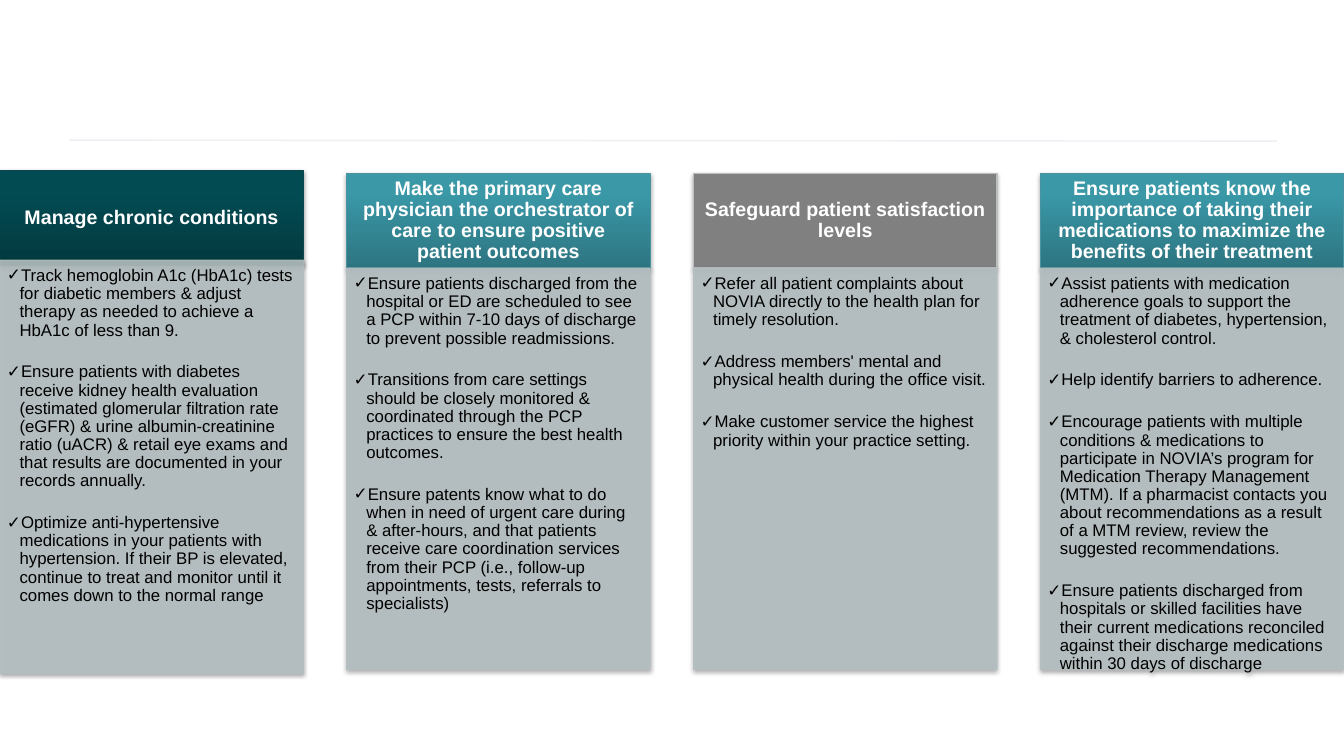
from copy import deepcopy
from dataclasses import dataclass

from lxml.etree import SubElement
from pptx import Presentation
from pptx.dml.color import RGBColor
from pptx.enum.shapes import MSO_CONNECTOR, MSO_SHAPE
from pptx.enum.text import MSO_ANCHOR, PP_ALIGN
from pptx.oxml.ns import qn
from pptx.shapes.autoshape import Shape
from pptx.slide import Slide
from pptx.text.text import _Paragraph
from pptx.util import Pt

COLORS = {
    "rule": "EEEFF3", "body": "B4BEC0", "shade": "000000",
    "ink": "000000", "white": "FFFFFF",
}
WIDTH = 216.8
PITCH = 247.7
HEAD = {
    "margin_left": Pt(7.9), "margin_right": Pt(7.9),
    "margin_top": Pt(4.3), "margin_bottom": Pt(4.3),
    "vertical_anchor": MSO_ANCHOR.MIDDLE, "word_wrap": True,
}
BODY = {
    "margin_left": Pt(5), "margin_right": Pt(6.5),
    "margin_top": Pt(5), "margin_bottom": Pt(7.2),
    "vertical_anchor": MSO_ANCHOR.TOP, "word_wrap": True,
}
TITLE = {"alignment": PP_ALIGN.CENTER, "line_spacing": 0.9}
POINT = {"alignment": PP_ALIGN.LEFT, "line_spacing": 0.9, "space_after": Pt(17)}


@dataclass
class Theme:
    line: str
    stops: list[tuple[float, str]]


@dataclass
class Column:
    title: str
    theme: Theme
    points: list[str]
    top: float = 123.8
    split: float = 191.5
    end: float = 478.1


DARK = Theme("0D464C", [(0, "023A40"), (0.8, "034B53"), (1, "014C55")])
TEAL = Theme("4994A0", [(0, "2D7581"), (0.8, "3A98A7"), (1, "389AAA")])
GREY = Theme("BBBEBE", [(0, "808080")])

COLUMNS = [
    Column("Manage chronic conditions", DARK, [
        "Track hemoglobin A1c (HbA1c) tests for diabetic members & adjust therapy as needed to achieve a HbA1c of less than 9.",
        "Ensure patients with diabetes receive kidney health evaluation (estimated glomerular filtration rate (eGFR) & urine albumin-creatinine ratio (uACR) & retail eye exams and that results are documented in your records annually.",
        "Optimize anti-hypertensive medications in your patients with hypertension. If their BP is elevated, continue to treat and monitor until it comes down to the normal range",
    ], 121.7, 185.8, 481),
    Column("Make the primary care physician the orchestrator of care to ensure positive patient outcomes", TEAL, [
        "Ensure patients discharged from the hospital or ED are scheduled to see a PCP within 7-10 days of discharge to prevent possible readmissions.",
        "Transitions from care settings should be closely monitored & coordinated through the PCP practices to ensure the best health outcomes.",
        "Ensure patents know what to do when in need of urgent care during & after-hours, and that patients receive care coordination services from their PCP (i.e., follow-up appointments, tests, referrals to specialists)",
    ]),
    Column("Safeguard patient satisfaction levels", GREY, [
        "Refer all patient complaints about NOVIA directly to the health plan for timely resolution.",
        "Address members' mental and physical health during the office visit.",
        "Make customer service the highest priority within your practice setting.",
    ]),
    Column("Ensure patients know the importance of taking their medications to maximize the benefits of their treatment", TEAL, [
        "Assist patients with medication adherence goals to support the treatment of diabetes, hypertension, & cholesterol control.",
        "Help identify barriers to adherence.",
        "Encourage patients with multiple conditions & medications to participate in NOVIA’s program for Medication Therapy Management (MTM). If a pharmacist contacts you about recommendations as a result of a MTM review, review the suggested recommendations.",
        "Ensure patients discharged from hospitals or skilled facilities have their current medications reconciled against their discharge medications within 30 days of discharge",
    ]),
]


def apply(target: object, values: dict) -> None:
    for name, value in values.items():
        setattr(target, name, value)


def tint(shape: Shape, stops: list[tuple[float, str]]) -> None:
    fill = shape.fill
    if len(stops) == 1:
        fill.solid()
        fill.fore_color.rgb = RGBColor.from_string(stops[0][1])
        return
    fill.gradient()
    fill.gradient_angle = 90
    group = shape.element.spPr.find(".//" + qn("a:gsLst"))
    group.append(deepcopy(group[-1]))
    for stop, (place, color) in zip(fill.gradient_stops, stops):
        stop.position = place
        stop.color.rgb = RGBColor.from_string(color)


def shade(shape: Shape) -> None:
    shape.shadow.inherit = False
    effects = shape.element.spPr.find(qn("a:effectLst"))
    outer = SubElement(
        effects, qn("a:outerShdw"), blurRad=str(Pt(3.1)),
        dist=str(Pt(1.8)), dir="5400000", rotWithShape="0",
    )
    color = SubElement(outer, qn("a:srgbClr"), val=COLORS["shade"])
    SubElement(color, qn("a:alpha"), val="35000")


def fade(shape: Shape) -> None:
    for color in shape.element.spPr.iter(qn("a:srgbClr")):
        SubElement(color, qn("a:alpha"), val="90000")


def box(slide: Slide, left: float, top: float, width: float, height: float,
        theme: Theme, frame: dict) -> Shape:
    shape = slide.shapes.add_shape(
        MSO_SHAPE.RECTANGLE, Pt(left), Pt(top), Pt(width), Pt(height))
    tint(shape, theme.stops)
    shape.line.color.rgb = RGBColor.from_string(theme.line)
    shape.line.width = Pt(0.75)
    apply(shape.text_frame, frame)
    return shape


def write(para: _Paragraph, text: str, size: float, color: str,
          bold: bool, values: dict) -> None:
    apply(para, values)
    run = para.add_run()
    run.text = text
    apply(run.font, {"name": "Arial", "size": Pt(size), "bold": bold})
    run.font.color.rgb = RGBColor.from_string(COLORS[color])


def check(para: _Paragraph) -> None:
    props = para._p.get_or_add_pPr()
    props.set("marL", str(Pt(9)))
    props.set("indent", str(Pt(-9)))
    SubElement(props, qn("a:buFont"), typeface="Arial")
    SubElement(props, qn("a:buChar"), char="✓")


def draw(slide: Slide, column: Column, left: float) -> None:
    head = box(slide, left, column.top, WIDTH, 67.7, column.theme, HEAD)
    shade(head)
    write(head.text_frame.paragraphs[0], column.title, 14, "white", True, TITLE)
    plain = Theme(COLORS["body"], [(0, COLORS["body"])])
    body = box(slide, left, column.split, WIDTH,
               column.end - column.split, plain, BODY)
    fade(body)
    shade(body)
    frame = body.text_frame
    for index, text in enumerate(column.points):
        para = frame.add_paragraph() if index else frame.paragraphs[0]
        write(para, text, 12, "ink", False, POINT)
        check(para)


def rule(slide: Slide) -> None:
    line = slide.shapes.add_connector(
        MSO_CONNECTOR.STRAIGHT, Pt(49), Pt(100.1), Pt(912.2), Pt(100.8))
    line.line.color.rgb = RGBColor.from_string(COLORS["rule"])
    line.line.width = Pt(1)
    SubElement(line.element.spPr, qn("a:effectLst"))


def main() -> None:
    deck = Presentation()
    apply(deck, {"slide_width": Pt(960), "slide_height": Pt(540)})
    slide = deck.slides.add_slide(deck.slide_layouts[6])
    rule(slide)
    for index, column in enumerate(COLUMNS):
        draw(slide, column, index * PITCH)
    deck.save("out.pptx")


if __name__ == "__main__":
    main()
